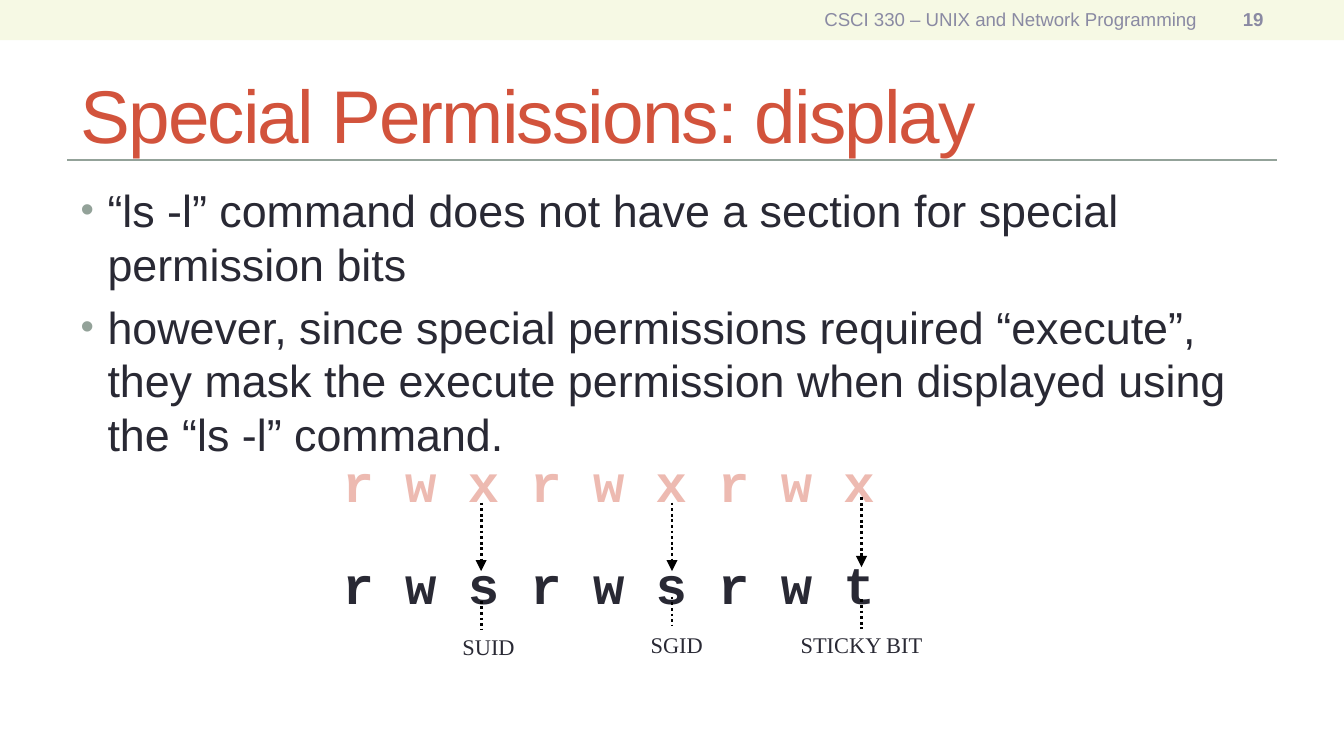
from pptx import Presentation
from pptx.util import Inches, Pt
from pptx.dml.color import RGBColor
from pptx.enum.dml import MSO_LINE as Dash
from pptx.enum.shapes import MSO_CONNECTOR as Link, MSO_SHAPE as Form
from pptx.enum.text import MSO_ANCHOR as Anchor, MSO_AUTO_SIZE as Fit, PP_ALIGN as Align
from pptx.oxml.ns import qn
from lxml.etree import SubElement

HUES = {"band": "F6F9E4", "rule": "93A299", "title": "D2533C", "text": "292934",
        "note": "8A8AA3", "pale": "EDBAB1", "dark": "000000"}

TITLE = "Special Permissions: display"
POINTS = [
    "“ls -l” command does not have a section for special permission bits",
    "however, since special permissions required “execute”, they mask the "
    "execute permission when displayed using the “ls -l” command.",
]
# text, box, bold
HEADS = [("CSCI 330 – UNIX and Network Programming", (3.75, 0.01, 5.25, 0.27), False),
         ("19", (9, 0.01, 0.5, 0.27), True)]
# text, top, hue, wrap
MODES = [("r w x r w x r w x", 3.3, "pale", False),
         ("r w s r w s r w t", 4.06, "text", True)]
# label, label box, line x, arrow span, stem span
BITS = [("SUID", (3.34, 4.66, 0.59, 0.3), 3.58, (3.74, 4.25), (4.47, 4.69)),
        ("SGID", (4.74, 4.65, 0.59, 0.3), 5, (3.74, 4.25), (4.44, 4.66)),
        ("STICKY BIT", (5.85, 4.65, 1.12, 0.3), 6.41, (3.7, 4.22), (4.46, 4.68))]


def color(hue):
    return RGBColor.from_string(HUES[hue])


def style(run, hue, **form):
    run.font.color.rgb = color(hue)
    for key, val in form.items():
        setattr(run.font, key, val)


def place(shape, box):
    for key, val in zip(("left", "top", "width", "height"), box):
        setattr(shape, key, Inches(val))


def write(slide, text, box, hue, align=Align.CENTER, anchor=Anchor.TOP,
          wrap=False, fit=Fit.SHAPE_TO_FIT_TEXT, **form):
    frame = slide.shapes.add_textbox(*map(Inches, box)).text_frame
    frame.word_wrap = wrap
    frame.auto_size = fit
    frame.vertical_anchor = anchor
    para = frame.paragraphs[0]
    para.alignment = align
    run = para.add_run()
    run.text = text
    style(run, hue, **form)


def draw(slide, start, end, hue, width, dots=False, arrow=False):
    link = slide.shapes.add_connector(Link.STRAIGHT, *map(Inches, (*start, *end)))
    link.line.color.rgb = color(hue)
    link.line.width = Pt(width)
    if dots:
        link.line.dash_style = Dash.ROUND_DOT
    if arrow:
        SubElement(link.line._get_or_add_ln(), qn("a:tailEnd"), type="triangle")
    SubElement(link._element.spPr, qn("a:effectLst"))


def bullet(para):
    props = para._p.get_or_add_pPr()
    props.set("marL", str(Inches(0.2)))
    props.set("indent", str(-Inches(0.2)))
    tint = SubElement(props, qn("a:buClr"))
    SubElement(tint, qn("a:srgbClr"), val=HUES["rule"])
    SubElement(props, qn("a:buSzPct"), val="85000")
    SubElement(props, qn("a:buFont"), typeface="Arial")
    SubElement(props, qn("a:buChar"), char="•")


def fill_title(title):
    place(title, (0.5, 0.44, 9, 0.81))
    frame = title.text_frame
    frame.auto_size = Fit.NONE
    frame.vertical_anchor = Anchor.MIDDLE
    para = frame.paragraphs[0]
    para.alignment = Align.LEFT
    run = para.add_run()
    run.text = TITLE
    style(run, "title", name="Arial", size=Pt(40))
    run._r.get_or_add_rPr().set("spc", "-100")


def fill_body(body):
    place(body, (0.5, 1.31, 9, 4))
    frame = body.text_frame
    frame.auto_size = Fit.NONE
    for i, text in enumerate(POINTS):
        para = frame.add_paragraph() if i else frame.paragraphs[0]
        bullet(para)
        para.space_before = Pt(4.8)
        run = para.add_run()
        run.text = text
        style(run, "text", name="Arial", size=Pt(24))


def main():
    deck = Presentation()
    deck.slide_width, deck.slide_height = Inches(10), Inches(10 * 9 / 16)
    slide = deck.slides.add_slide(deck.slide_layouts[1])

    band = slide.shapes.add_shape(Form.RECTANGLE, *map(Inches, (0, 0, 10, 0.3)))
    band.shadow.inherit = False
    band.fill.solid()
    band.fill.fore_color.rgb = color("band")
    band.line.fill.background()
    draw(slide, (0.5, 1.19), (9.5, 1.19), "rule", 0.75)

    fill_title(slide.shapes.title)
    fill_body(slide.placeholders[1])
    for text, box, bold in HEADS:
        write(slide, text, box, "note", Align.RIGHT, Anchor.MIDDLE, True, Fit.NONE,
              name="Arial", size=Pt(10), bold=bold)
    for text, top, hue, wrap in MODES:
        write(slide, text, (2.43, top, 4.2, 0.57), hue, wrap=wrap,
              name="Courier New", size=Pt(28), bold=True)
    for text, box, x, arrow, stem in BITS:
        write(slide, text, box, "text", name="Times New Roman", size=Pt(12))
        for (top, end), tip in ((arrow, True), (stem, False)):
            draw(slide, (x, top), (x, end), "dark", 1.5, True, tip)

    deck.save("out.pptx")


if __name__ == "__main__":
    main()
